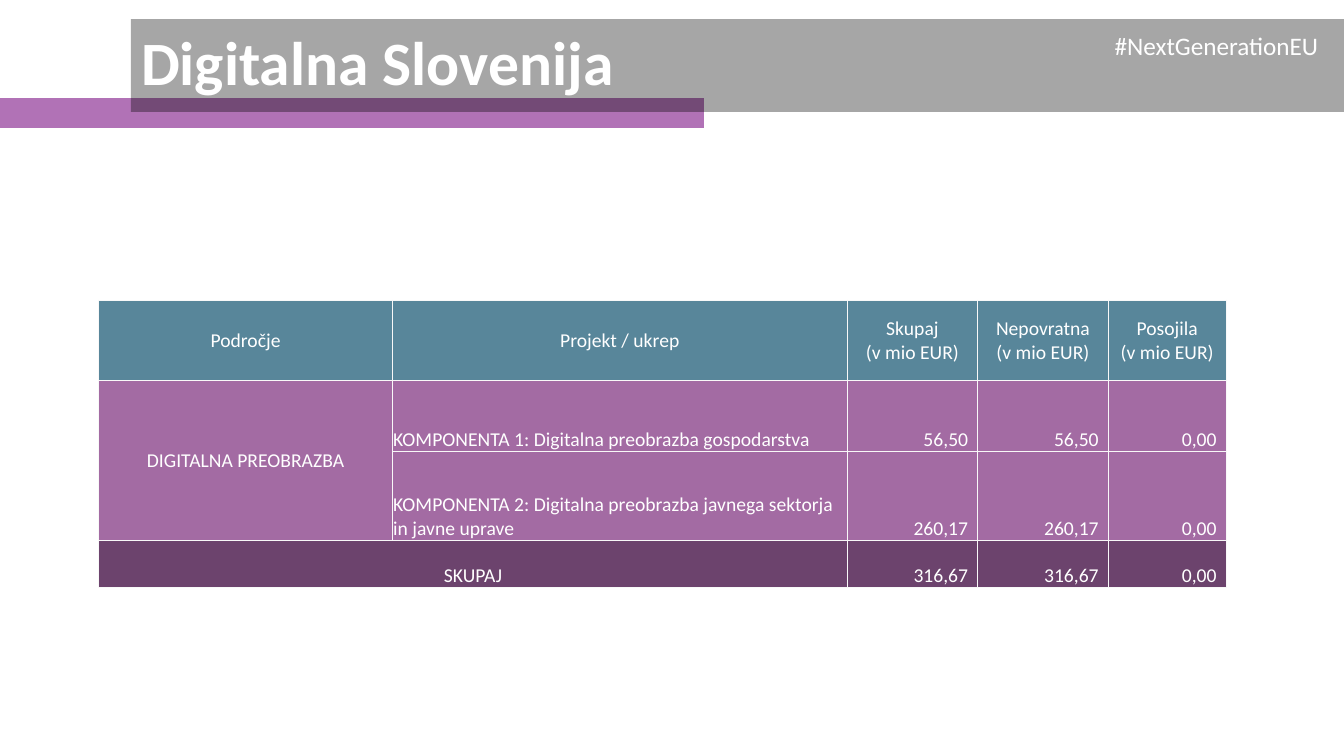
from dataclasses import dataclass

from lxml.etree import SubElement
from pptx import Presentation
from pptx.dml.color import RGBColor
from pptx.enum.shapes import MSO_SHAPE
from pptx.enum.text import MSO_ANCHOR, PP_ALIGN
from pptx.oxml.ns import qn
from pptx.util import Cm, Pt

TITLE = "Digitalna Slovenija"
HASHTAG = "#NextGenerationEU"
HEADER = [
    "Področje",
    "Projekt / ukrep",
    "Skupaj\n(v mio EUR)",
    "Nepovratna\n(v mio EUR)",
    "Posojila\n(v mio EUR)",
]
PROJECTS = [
    ["DIGITALNA PREOBRAZBA", "KOMPONENTA 1: Digitalna preobrazba gospodarstva", "56,50", "56,50", "0,00"],
    ["", "KOMPONENTA 2: Digitalna preobrazba javnega sektorja in javne uprave", "260,17", "260,17", "0,00"],
]
TOTAL = ["SKUPAJ", "", "316,67", "316,67", "0,00"]
COLUMN_WIDTHS = [7.4, 11.46, 3.29, 3.29, 2.97]
ROW_HEIGHTS = [2.01, 1.8, 2.24, 1.19]


@dataclass(frozen=True)
class Theme:
    font: str = "Calibri"
    text: str = "FFFFFF"
    accent: str = "B172B6"
    banner: str = "000000"
    banner_opacity: int = 35
    header: str = "58869A"
    project: str = "A36BA3"
    total: str = "6C436D"
    border: str = "F8F8F8"
    title_size: int = 44
    hashtag_size: int = 18
    table_size: int = 14


THEME = Theme()


def write_text(frame, text, size, bold=False, align=PP_ALIGN.LEFT, anchor=MSO_ANCHOR.TOP, spacing=1.0):
    frame.text = text
    frame.vertical_anchor = anchor
    for paragraph in frame.paragraphs:
        paragraph.alignment = align
        paragraph.line_spacing = spacing
        paragraph.space_before = Pt(0)
        for run in paragraph.runs:
            run.font.name = THEME.font
            run.font.size = Pt(size)
            run.font.bold = bold
            run.font.color.rgb = RGBColor.from_string(THEME.text)


def paint(fill, color, opacity=100):
    fill.solid()
    fill.fore_color.rgb = RGBColor.from_string(color)
    if opacity < 100:
        color_element = fill._xPr.find(qn("a:solidFill"))[0]
        SubElement(color_element, qn("a:alpha"), val=str(opacity * 1000))


def place(shape, left, top, width, height):
    shape.left, shape.top, shape.width, shape.height = map(Cm, (left, top, width, height))


def add_borders(cell):
    properties = cell._tc.get_or_add_tcPr()
    for side in ("lnL", "lnR", "lnT", "lnB"):
        line = SubElement(properties, qn(f"a:{side}"), w=str(Pt(1)))
        solid = SubElement(line, qn("a:solidFill"))
        SubElement(solid, qn("a:srgbClr"), val=THEME.border)


def add_banner(slide):
    bar = slide.shapes.add_shape(MSO_SHAPE.FLOWCHART_PROCESS, 0, Cm(2.46), Cm(17.73), Cm(0.77))
    bar.shadow.inherit = False
    paint(bar.fill, THEME.accent)
    bar.line.fill.background()

    title = slide.shapes.title
    bar.element.addnext(title.element)
    place(title, 3.3, 0.48, 30.63, 2.34)
    paint(title.fill, THEME.banner, THEME.banner_opacity)
    write_text(title.text_frame, TITLE, THEME.title_size, bold=True, anchor=MSO_ANCHOR.MIDDLE, spacing=0.9)

    hashtag = slide.shapes.add_textbox(Cm(27.84), Cm(0.64), Cm(5.72), Cm(1.02))
    hashtag.text_frame.word_wrap = False
    write_text(hashtag.text_frame, HASHTAG, THEME.hashtag_size)


def add_funding_table(slide):
    rows = [HEADER, *PROJECTS, TOTAL]
    fills = [THEME.header, *[THEME.project] * len(PROJECTS), THEME.total]
    table = slide.shapes.add_table(
        len(rows), len(HEADER), Cm(2.49), Cm(7.57), Cm(sum(COLUMN_WIDTHS)), Cm(sum(ROW_HEIGHTS))
    ).table
    for column, width in zip(table.columns, COLUMN_WIDTHS):
        column.width = Cm(width)
    for row, height in zip(table.rows, ROW_HEIGHTS):
        row.height = Cm(height)

    last = len(rows) - 1
    table.cell(1, 0).merge(table.cell(len(PROJECTS), 0))
    table.cell(last, 0).merge(table.cell(last, 1))

    for row_index, (values, fill) in enumerate(zip(rows, fills)):
        for column_index, value in enumerate(values):
            cell = table.cell(row_index, column_index)
            is_number = row_index > 0 and column_index > 1
            is_centred = row_index == 0 or column_index == 0
            is_middle = is_centred and row_index < last
            cell.margin_left = cell.margin_top = Cm(0.02)
            cell.margin_right = Cm(0.24 if is_number else 0.02)
            cell.margin_bottom = 0
            add_borders(cell)
            paint(cell.fill, fill)
            cell.vertical_anchor = MSO_ANCHOR.MIDDLE if is_middle else MSO_ANCHOR.BOTTOM
            if value:
                align = PP_ALIGN.CENTER if is_centred else PP_ALIGN.RIGHT if is_number else PP_ALIGN.LEFT
                write_text(cell.text_frame, value, THEME.table_size, align=align, anchor=None)


def main():
    presentation = Presentation()
    presentation.slide_width, presentation.slide_height = Cm(33.87), Cm(19.05)
    slide = presentation.slides.add_slide(presentation.slide_layouts[5])
    add_banner(slide)
    add_funding_table(slide)
    presentation.save("out.pptx")


if __name__ == "__main__":
    main()
